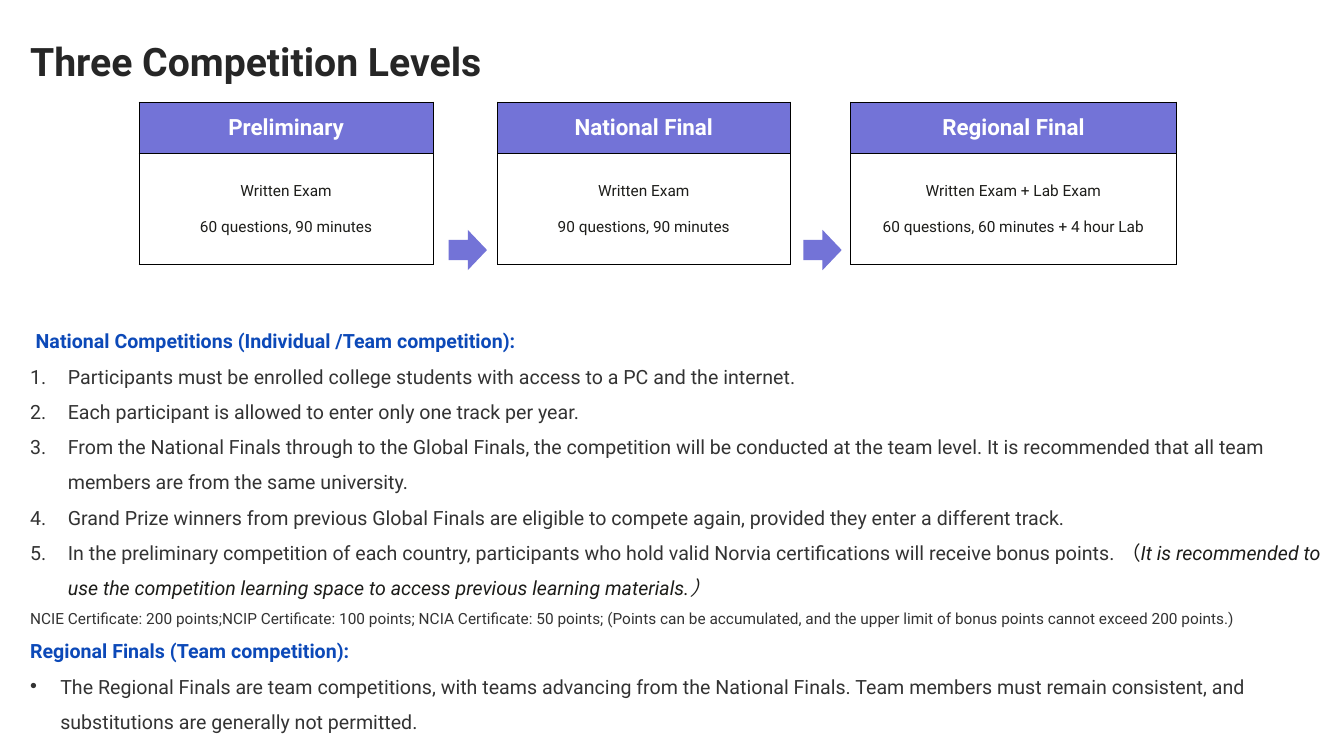
from lxml.etree import SubElement
from pptx import Presentation
from pptx.dml.color import RGBColor
from pptx.enum.shapes import MSO_SHAPE
from pptx.enum.text import MSO_ANCHOR, PP_ALIGN
from pptx.oxml.ns import qn
from pptx.util import Pt

COLORS = {"violet": "7373D7", "white": "FFFFFF", "black": "000000", "ink": "1D1D1A",
          "title": "262626", "blue": "0C49B8", "gray": "333333"}
TITLE = "Three Competition Levels"
LEVELS = [
    ("Preliminary", ["Written Exam", "60 questions, 90 minutes"]),
    ("National Final", ["Written Exam", "90 questions, 90 minutes"]),
    ("Regional Final", ["Written Exam + Lab Exam", "60 questions, 60 minutes + 4 hour Lab"]),
]
COLUMN_WIDTHS = [210.4, 46, 208.9, 43.2, 233.1]
ROW_HEIGHTS = [36.8, 79.2]
TABLE_LEFT, TABLE_TOP = 99.3, 72.8
ARROW_LEFTS = [320.6, 574.1]
RULES = [
    ("heading", ["National Competitions (Individual /Team competition):"]),
    ("number", ["Participants must be enrolled college students with access to a PC and the internet."]),
    ("number", ["Each participant is allowed to enter only one track per year."]),
    ("number", ["From the National Finals through to the Global Finals, the competition will be conducted "
                "at the team level. It is recommended that all team members are from the same university."]),
    ("number", ["Grand Prize winners from previous Global Finals are eligible to compete again, "
                "provided they enter a different track."]),
    ("number", ["In the preliminary competition of each country, participants who hold valid Norvia "
                "certifications will receive bonus points. ", "（",
                "It is recommended to use the competition learning space to access previous "
                "learning materials.）"]),
    ("note", ["NCIE Certificate: 200 points;NCIP Certificate: 100 points; NCIA Certificate: 50 points; "
              "(Points can be accumulated, and the upper limit of bonus points cannot exceed 200 points.)"]),
    ("heading", ["Regional Finals (Team competition):"]),
    ("bullet", ["The Regional Finals are team competitions, with teams advancing from the National Finals. "
                "Team members must remain consistent, and substitutions are generally not permitted."]),
]
RULE_FORMATS = {
    "heading": {"color": "blue", "bold": True},
    "number": {"color": "gray", "indent": 27, "marker": ("buAutoNum", {"type": "arabicPeriod"})},
    "note": {"color": "gray", "size": 11},
    "bullet": {"color": "gray", "indent": 21.6, "marker": ("buChar", {"char": "•"})},
}
ASIDE_FORMATS = [{}, {"color": "ink"}, {"color": "ink", "italic": True}]


def write(paragraph, text, size=14, color="ink", bold=False, italic=False,
          align=PP_ALIGN.LEFT, spacing=None, before=0, indent=0, marker=None):
    paragraph.alignment = align
    paragraph.space_before = Pt(before)
    if spacing:
        paragraph.line_spacing = spacing
    properties = paragraph._p.get_or_add_pPr()
    if marker and not paragraph.runs:
        properties.set("marL", str(Pt(indent)))
        properties.set("indent", str(Pt(-indent)))
        tag, attributes = marker
        SubElement(properties, qn("a:buFont"), typeface="Arial")
        SubElement(properties, qn("a:" + tag), attributes)
    run = paragraph.add_run()
    run.text = text
    font = run.font
    font.name, font.size, font.bold, font.italic = "Roboto", Pt(size), bold, italic
    font.color.rgb = RGBColor.from_string(COLORS[color])


def next_paragraph(frame, index):
    return frame.add_paragraph() if index else frame.paragraphs[0]


def set_borders(cell, visible):
    properties = cell._tc.get_or_add_tcPr()
    for side in "LRTB":
        border = SubElement(properties, qn("a:ln" + side), w=str(Pt(0.5)))
        if side in visible:
            paint = SubElement(border, qn("a:solidFill"))
            SubElement(paint, qn("a:srgbClr"), val=COLORS["black"])
        else:
            SubElement(border, qn("a:noFill"))


def add_levels(slide):
    table = slide.shapes.add_table(2, 5, Pt(TABLE_LEFT), Pt(TABLE_TOP),
                                   Pt(sum(COLUMN_WIDTHS)), Pt(sum(ROW_HEIGHTS))).table
    table.first_row = table.horz_banding = False
    for column, width in zip(table.columns, COLUMN_WIDTHS):
        column.width = Pt(width)
    for row, height in zip(table.rows, ROW_HEIGHTS):
        row.height = Pt(height)
    for row in range(2):
        for column in range(5):
            cell = table.cell(row, column)
            set_borders(cell, "LR" if column % 2 else "LRTB")
            cell.fill.background()
            cell.vertical_anchor = MSO_ANCHOR.MIDDLE
            cell.margin_left = cell.margin_right = cell.margin_top = cell.margin_bottom = 0
    for gap in (1, 3):
        table.cell(0, gap).merge(table.cell(1, gap))
    for index, (level, details) in enumerate(LEVELS):
        header, body = (table.cell(row, 2 * index) for row in range(2))
        header.fill.solid()
        header.fill.fore_color.rgb = RGBColor.from_string(COLORS["violet"])
        write(header.text_frame.paragraphs[0], level, size=16, color="white", bold=True,
              align=PP_ALIGN.CENTER)
        for line, detail in enumerate(details):
            write(next_paragraph(body.text_frame, line), detail, size=11,
                  align=PP_ALIGN.CENTER, before=13 * line)


def add_arrow(slide, left):
    arrow = slide.shapes.add_shape(MSO_SHAPE.RIGHT_ARROW, Pt(left), Pt(164.2), Pt(27.4), Pt(28.8))
    arrow.shadow.inherit = False
    arrow.fill.solid()
    arrow.fill.fore_color.rgb = RGBColor.from_string(COLORS["violet"])
    arrow.line.fill.background()


def add_frame(slide, left, top, width, height):
    frame = slide.shapes.add_textbox(Pt(left), Pt(top), Pt(width), Pt(height)).text_frame
    frame.word_wrap = True
    return frame


def main():
    """Build the slide on the three competition levels and their rules."""
    presentation = Presentation()
    presentation.slide_width, presentation.slide_height = Pt(960.5), Pt(540)
    slide = presentation.slides.add_slide(presentation.slide_layouts[6])
    add_levels(slide)
    for left in ARROW_LEFTS:
        add_arrow(slide, left)
    title = add_frame(slide, 14.4, 23, 910, 48)
    write(title.paragraphs[0], TITLE, size=28, color="title", bold=True)
    rules = add_frame(slide, 14.4, 223.2, 946, 304.6)
    for index, (kind, parts) in enumerate(RULES):
        paragraph = next_paragraph(rules, index)
        for part, aside in zip(parts, ASIDE_FORMATS):
            write(paragraph, part, spacing=1.5, **{**RULE_FORMATS[kind], **aside})
    rules.paragraphs[0]._p.get_or_add_pPr().set("marL", str(Pt(4)))
    presentation.save("out.pptx")


if __name__ == "__main__":
    main()
